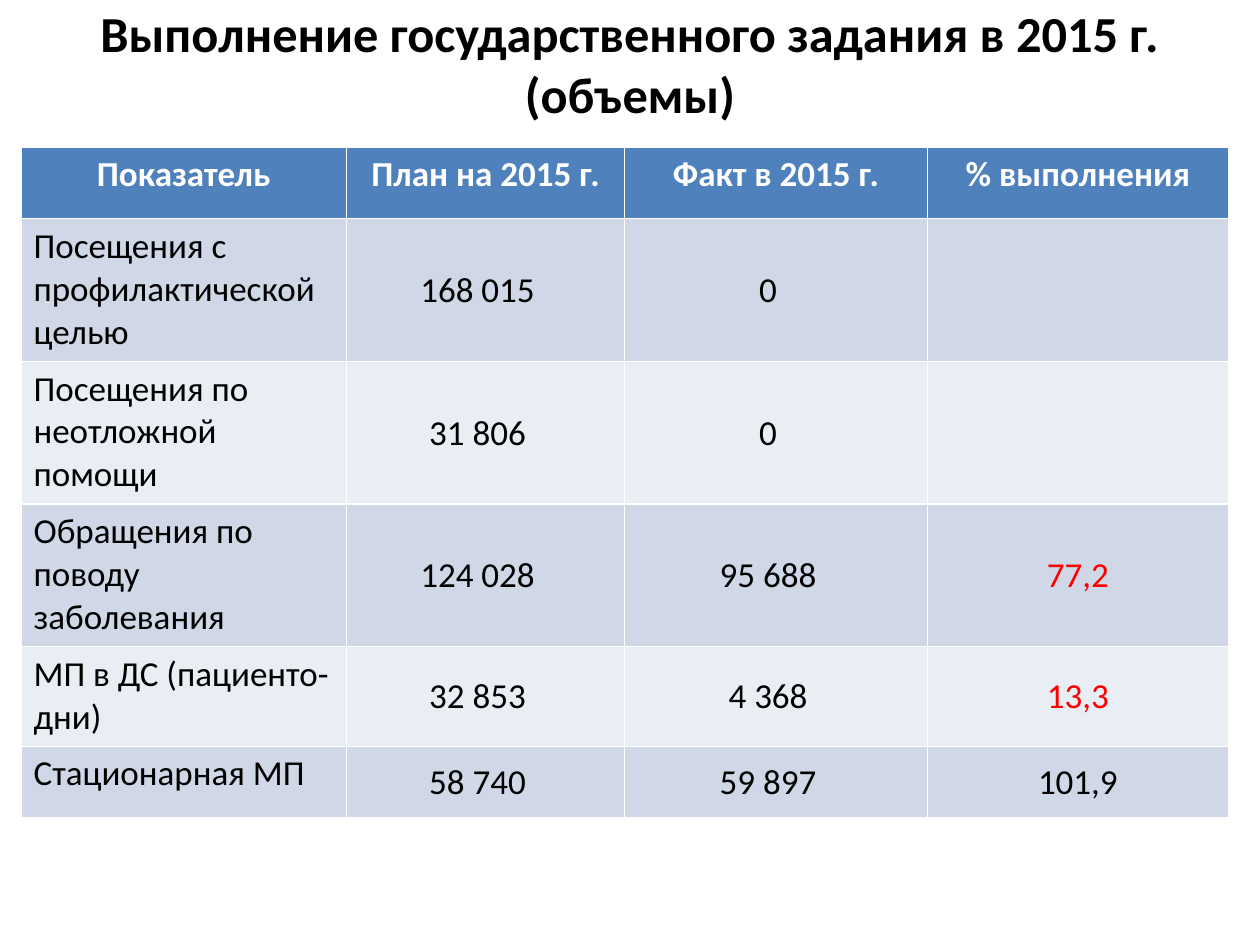
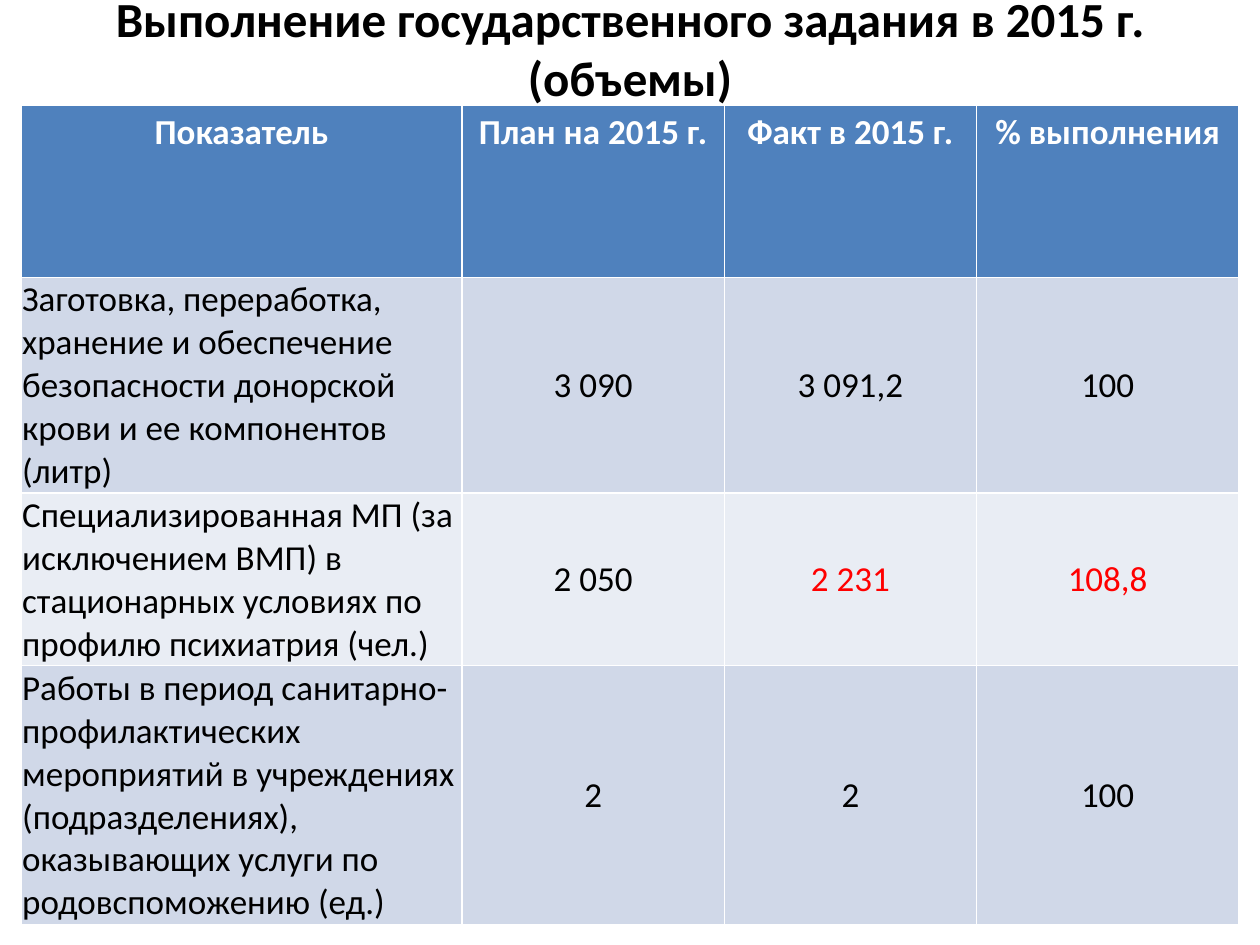
from pptx import Presentation
from pptx.dml.color import RGBColor
from pptx.enum.text import MSO_ANCHOR, MSO_AUTO_SIZE, PP_ALIGN
from pptx.util import Pt

# Content
TITLE = "Выполнение государственного задания в 2015 г. (объемы)"
HEADS = ("Показатель", "План на 2015 г.", "Факт в 2015 г.", "% выполнения")
ALERTS = {"77,2", "13,3", "2 231", "108,8"}
SLIDES = [
    dict(
        title=(12, 0, 696, 72), size=28.8,
        left=12, top=84,
        cols=(186, 159, 173, 172), heights=(41, 81.5, 81.5, 81.5, 57, 41),
        tight=False, pad=9.1,
        rows=[
            ("Посещения с профилактической целью", "168 015", "0", ""),
            ("Посещения по неотложной помощи", "31 806", "0", ""),
            ("Обращения по поводу заболевания", "124 028", "95 688", "77,2"),
            ("МП в ДС (пациенто-дни)", "32 853", "4 368", "13,3"),
            ("Стационарная МП", "58 740", "59 897", "101,9"),
        ],
    ),
    dict(
        title=(0, 0, 720, 54), size=28,
        left=12, top=60,
        cols=(252, 150, 144, 150), heights=(98.5, 123, 98.5, 148),
        tight=True, pad=0,
        rows=[
            ("Заготовка, переработка, хранение и обеспечение безопасности "
             "донорской крови и ее компонентов (литр)",
             "3 090", "3 091,2", "100"),
            ("Специализированная МП (за исключением ВМП) в стационарных "
             "условиях по профилю психиатрия (чел.)",
             "2 050", "2 231", "108,8"),
            ("Работы в период санитарно-профилактических мероприятий в "
             "учреждениях (подразделениях), оказывающих услуги по "
             "родовспоможению (ед.)", "2", "2", "100"),
        ],
    ),
]

# Shared style
FONT = "Calibri"
BLACK = RGBColor(0, 0, 0)
WHITE = RGBColor(255, 255, 255)
RED = RGBColor(255, 0, 0)
BLUE = RGBColor(0x4F, 0x81, 0xBD)
BANDS = (RGBColor(0xE9, 0xED, 0xF4), RGBColor(0xD0, 0xD8, 0xE8))
INSET = 0.7
CENTER, LEFT = PP_ALIGN.CENTER, PP_ALIGN.LEFT
MIDDLE = MSO_ANCHOR.MIDDLE
NO_FIT = MSO_AUTO_SIZE.NONE


def write(frame, text, size, color, bold, align):
    frame.text = text
    para = frame.paragraphs[0]
    para.alignment = align
    for run in para.runs:
        font = run.font
        font.name, font.size, font.bold = FONT, Pt(size), bold
        font.color.rgb = color


def add_title(slide, box, size):
    title = slide.shapes.title
    title.left, title.top, title.width, title.height = map(Pt, box)
    frame = title.text_frame
    write(frame, TITLE, size, BLACK, True, CENTER)
    frame.word_wrap = True
    frame.auto_size = NO_FIT
    frame.vertical_anchor = MIDDLE


def squeeze(cell, pad):
    cell.vertical_anchor = MIDDLE
    cell.margin_left = cell.margin_top = Pt(INSET)
    cell.margin_right = Pt(INSET + pad)
    cell.margin_bottom = 0


def add_grid(slide, page):
    rows = [HEADS] + page["rows"]
    cols, heights = page["cols"], page["heights"]
    table = slide.shapes.add_table(
        len(rows), len(cols), Pt(page["left"]), Pt(page["top"]),
        Pt(sum(cols)), Pt(sum(heights))).table
    for col, width in zip(table.columns, cols):
        col.width = Pt(width)
    for row, height in zip(table.rows, heights):
        row.height = Pt(height)

    for r, texts in enumerate(rows):
        head = r == 0
        for c, text in enumerate(texts):
            cell = table.cell(r, c)
            cell.fill.solid()
            cell.fill.fore_color.rgb = BLUE if head else BANDS[r % 2]
            color = WHITE if head else RED if text in ALERTS else BLACK
            align = CENTER if head or c else LEFT
            write(cell.text_frame, text, 20, color, head, align)
            # Plan and fact figures sit slightly left of centre
            if not head and text and (c or page["tight"]):
                squeeze(cell, page["pad"] if c in (1, 2) else 0)


def main():
    deck = Presentation()
    deck.slide_width, deck.slide_height = Pt(720), Pt(540)
    for page in SLIDES:
        slide = deck.slides.add_slide(deck.slide_layouts[5])
        add_title(slide, page["title"], page["size"])
        add_grid(slide, page)
    deck.save("out.pptx")


if __name__ == "__main__":
    main()
